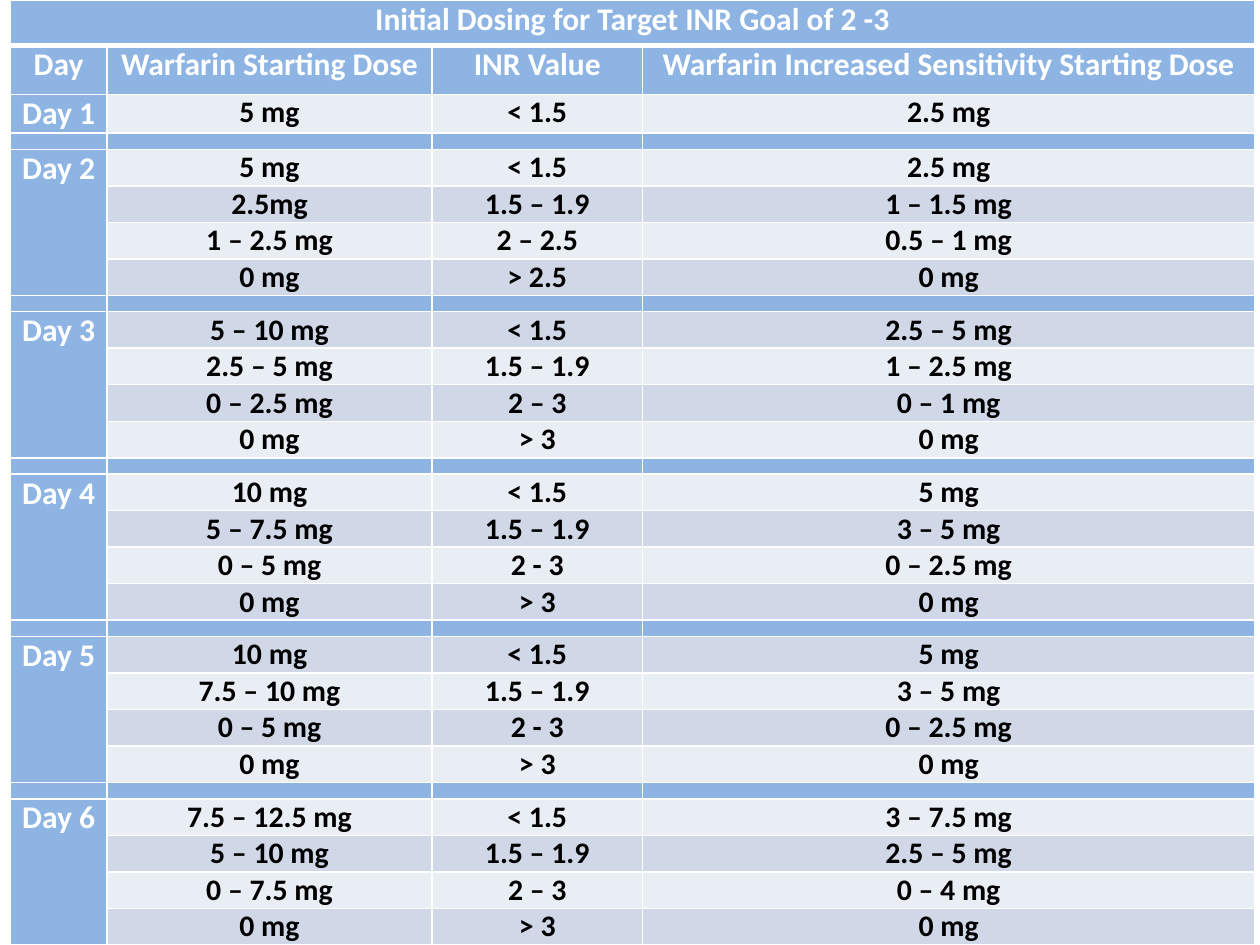
"""Build a one-slide table of initial warfarin dosing by day and INR value."""
import pptx
import pptx.dml.color
import pptx.enum.text
import pptx.oxml.ns
import pptx.util
from lxml import etree

Inches = pptx.util.Inches
Pt = pptx.util.Pt
RGBColor = pptx.dml.color.RGBColor

BLUE = RGBColor(0x8E, 0xB4, 0xE3)
LIGHT = RGBColor(0xE9, 0xED, 0xF4)
DARK = RGBColor(0xD0, 0xD8, 0xE8)
WHITE = RGBColor(0xFF, 0xFF, 0xFF)
BLACK = RGBColor(0, 0, 0)
FONT = "Calibri"

HEADING = "Initial Dosing for Target INR Goal of 2 -3"
COLUMNS = [
    ("Day", 0.77),
    ("Warfarin Starting Dose", 2.58),
    ("INR Value", 1.67),
    ("Warfarin Increased Sensitivity Starting Dose", 4.86),
]
DAYS = [
    ("Day 1", [("5 mg", "< 1.5", "2.5 mg")]),
    ("Day 2", [
        ("5 mg", "< 1.5", "2.5 mg"),
        ("2.5mg", "1.5 – 1.9", "1 – 1.5 mg"),
        ("1 – 2.5 mg", "2 – 2.5", "0.5 – 1 mg"),
        ("0 mg", "> 2.5", "0 mg"),
    ]),
    ("Day 3", [
        ("5 – 10 mg", "< 1.5", "2.5 – 5 mg"),
        ("2.5 – 5 mg", "1.5 – 1.9", "1 – 2.5 mg"),
        ("0 – 2.5 mg", "2 – 3", "0 – 1 mg"),
        ("0 mg", "> 3", "0 mg"),
    ]),
    ("Day 4", [
        ("10 mg", "< 1.5", "5 mg"),
        ("5 – 7.5 mg", "1.5 – 1.9", "3 – 5 mg"),
        ("0 – 5 mg", "2 - 3", "0 – 2.5 mg"),
        ("0 mg", "> 3", "0 mg"),
    ]),
    ("Day 5", [
        ("10 mg", "< 1.5", "5 mg"),
        ("7.5 – 10 mg", "1.5 – 1.9", "3 – 5 mg"),
        ("0 – 5 mg", "2 - 3", "0 – 2.5 mg"),
        ("0 mg", "> 3", "0 mg"),
    ]),
    ("Day 6", [
        ("7.5 – 12.5 mg", "< 1.5", "3 – 7.5 mg"),
        ("5 – 10 mg", "1.5 – 1.9", "2.5 – 5 mg"),
        ("0 – 7.5 mg", "2 – 3", "0 – 4 mg"),
        ("0 mg", "> 3", "0 mg"),
    ]),
]
HEADING_HEIGHT, LABEL_HEIGHT, FIRST_DAY_HEIGHT = 0.36, 0.39, 0.3
GAP_HEIGHT, DOSE_HEIGHT = 0.13, 0.29


def write_cell(cell, text="", size=18, color=WHITE, fill=BLUE):
    cell.margin_left = cell.margin_right = Inches(0.07)
    cell.margin_top = cell.margin_bottom = 0
    cell.fill.solid()
    cell.fill.fore_color.rgb = fill
    paragraph = cell.text_frame.paragraphs[0]
    paragraph.alignment = pptx.enum.text.PP_ALIGN.CENTER
    if not text:
        ending = etree.SubElement(paragraph._p, pptx.oxml.ns.qn("a:endParaRPr"))
        ending.set("sz", str(size * 100))
        return
    run = paragraph.add_run()
    run.text = text
    run.font.name = FONT
    run.font.size = Pt(size)
    run.font.bold = True
    run.font.color.rgb = color


def add_borders(cell, top=1, bottom=1):
    properties = cell._tc.get_or_add_tcPr()
    widths = {"a:lnL": 1, "a:lnR": 1, "a:lnT": top, "a:lnB": bottom}
    for position, (side, width) in enumerate(widths.items()):
        line = etree.Element(pptx.oxml.ns.qn(side), w=str(Pt(width)))
        solid = etree.SubElement(line, pptx.oxml.ns.qn("a:solidFill"))
        etree.SubElement(solid, pptx.oxml.ns.qn("a:srgbClr"), val=str(WHITE))
        properties.insert(position, line)


def main():
    heights = [HEADING_HEIGHT, LABEL_HEIGHT, FIRST_DAY_HEIGHT]
    for _, doses in DAYS[1:]:
        heights += [GAP_HEIGHT] + [DOSE_HEIGHT] * len(doses)

    deck = pptx.Presentation()
    deck.slide_width, deck.slide_height = Inches(10), Inches(7.5)
    slide = deck.slides.add_slide(deck.slide_layouts[6])
    dosing = slide.shapes.add_table(
        len(heights), len(COLUMNS), Inches(0.08), 0, Inches(9.88), Inches(7.5)
    ).table
    for row, height in zip(dosing.rows, heights):
        row.height = Inches(height)

    dosing.cell(0, 0).merge(dosing.cell(0, len(COLUMNS) - 1))
    write_cell(dosing.cell(0, 0), HEADING)
    for column, (label, width) in enumerate(COLUMNS):
        dosing.columns[column].width = Inches(width)
        write_cell(dosing.cell(1, column), label)

    row = 2
    for day, doses in DAYS:
        if row > 2:
            for column in range(len(COLUMNS)):
                write_cell(dosing.cell(row, column), size=6)
            row += 1
        if len(doses) > 1:
            dosing.cell(row, 0).merge(dosing.cell(row + len(doses) - 1, 0))
        write_cell(dosing.cell(row, 0), day)
        for dose in doses:
            band = DARK if row % 2 else LIGHT
            for column, value in enumerate(dose, start=1):
                write_cell(dosing.cell(row, column), value, size=17, color=BLACK, fill=band)
            row += 1

    for index in range(len(heights)):
        for column in range(len(COLUMNS)):
            add_borders(dosing.cell(index, column),
                        top=3 if index == 1 else 1, bottom=3 if index == 0 else 1)
    deck.save("out.pptx")


if __name__ == "__main__":
    main()
